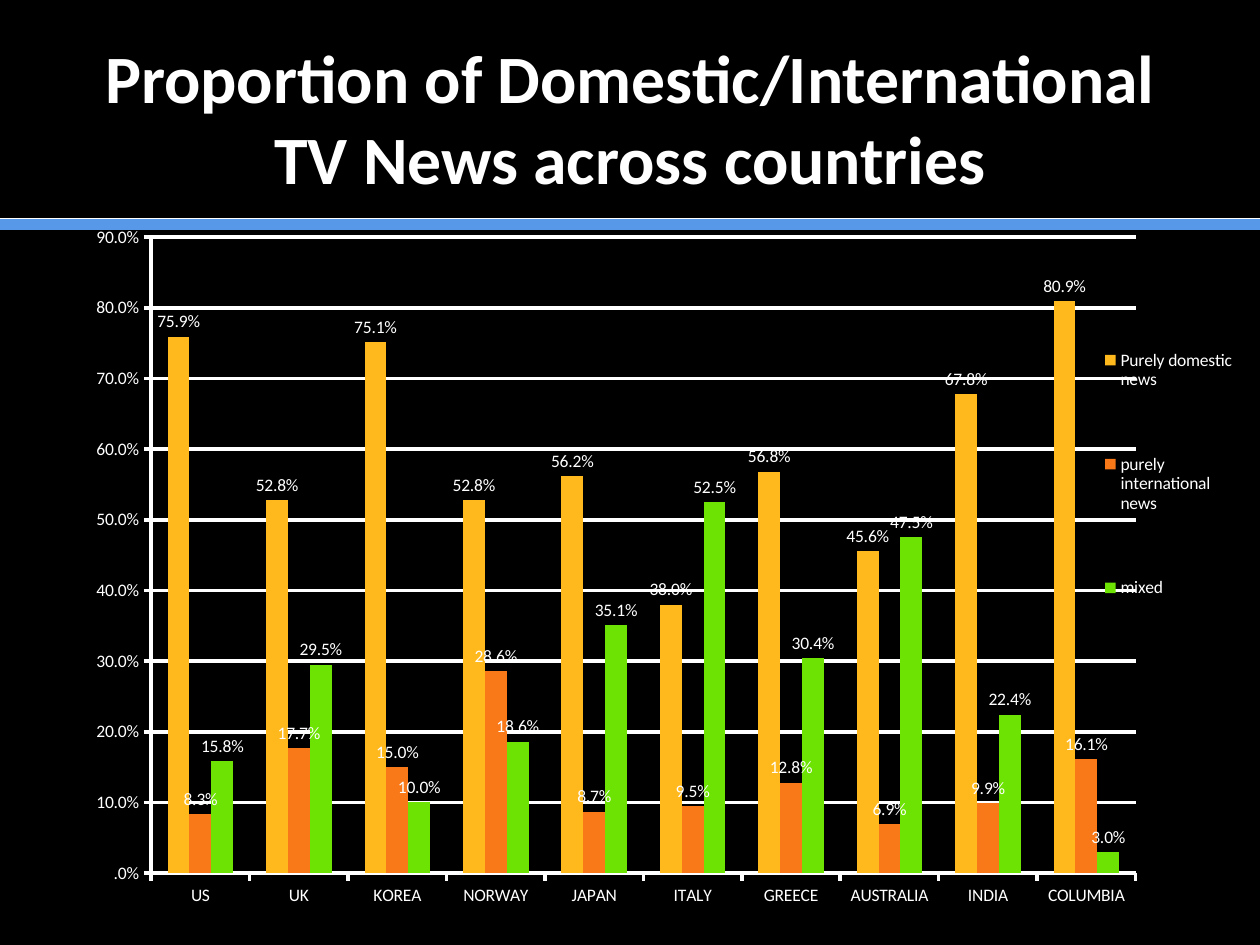
from lxml import etree
from pptx import Presentation
from pptx.chart.data import CategoryChartData
from pptx.dml.color import RGBColor
from pptx.enum.chart import XL_CHART_TYPE, XL_LABEL_POSITION, XL_LEGEND_POSITION, XL_TICK_MARK
from pptx.enum.shapes import MSO_CONNECTOR
from pptx.enum.text import MSO_ANCHOR, PP_ALIGN
from pptx.oxml import parse_xml
from pptx.oxml.ns import nsdecls, qn
from pptx.util import Inches, Pt

FONT = "Calibri"
WHITE = "FFFFFF"
TITLE = "Proportion of Domestic/International TV News across countries"
RULES = [(1.78, "5799E8", 7), (1.73, WHITE, 0.5)]  # top, colour, width
COUNTRIES = ["US", "UK", "KOREA", "NORWAY", "JAPAN", "ITALY", "GREECE",
             "AUSTRALIA", "INDIA", "COLUMBIA"]
SERIES = [
    ("Purely domestic news", "FFB91D",
     [0.759, 0.528, 0.751, 0.528, 0.562, 0.38, 0.568, 0.456, 0.678, 0.809]),
    ("purely international news", "F97817",
     [0.083, 0.177, 0.15, 0.286, 0.087, 0.095, 0.128, 0.069, 0.099, 0.161]),
    ("mixed", "6DE304",
     [0.158, 0.295, 0.1, 0.186, 0.351, 0.525, 0.304, 0.475, 0.224, 0.03]),
]
PERCENT = "####.0%"


def rgb(color):
    return RGBColor.from_string(color)


def format_font(font, size, color=WHITE, bold=False):
    font.name, font.size, font.bold = FONT, Pt(size), bold
    font.color.rgb = rgb(color)


def format_line(line, color, width):
    line.color.rgb = rgb(color)
    line.width = Pt(width)


def add_text(slide, text, box, size, color=WHITE, bold=False, align=PP_ALIGN.CENTER):
    tf = slide.shapes.add_textbox(*map(Inches, box)).text_frame
    tf.word_wrap = True
    tf.vertical_anchor = MSO_ANCHOR.MIDDLE
    p = tf.paragraphs[0]
    p.alignment = align
    r = p.add_run()
    r.text = text
    format_font(r.font, size, color, bold)


def add_rule(slide, top, color, width):
    line = slide.shapes.add_connector(
        MSO_CONNECTOR.STRAIGHT, 0, Inches(top), Inches(10), Inches(top))
    format_line(line.line, color, width)
    etree.SubElement(line._element.spPr, qn("a:effectLst"))


def layout_xml(x, y, w, h, inner=False):
    """Manual chart layout, in fractions of the chart's size."""
    target = '<c:layoutTarget val="inner"/>' if inner else ""
    return parse_xml(
        f'<c:layout {nsdecls("c")}><c:manualLayout>{target}'
        '<c:xMode val="edge"/><c:yMode val="edge"/>'
        f'<c:x val="{x}"/><c:y val="{y}"/><c:w val="{w}"/><c:h val="{h}"/>'
        '</c:manualLayout></c:layout>')


def add_news_chart(slide, box):
    data = CategoryChartData(number_format=PERCENT)
    data.categories = COUNTRIES
    for name, _, values in SERIES:
        data.add_series(name, values)
    chart = slide.shapes.add_chart(
        XL_CHART_TYPE.COLUMN_CLUSTERED, *map(Inches, box), data).chart
    chart.has_title = False
    format_font(chart.font, 10)

    plot = chart.plots[0]
    plot.gap_width, plot.overlap, plot.vary_by_categories = 150, 0, False
    for series, (_, color, _) in zip(plot.series, SERIES):
        series.format.fill.solid()
        series.format.fill.fore_color.rgb = rgb(color)
        labels = series.data_labels
        labels.show_value = True
        labels.number_format, labels.number_format_is_linked = PERCENT, False
        labels.position = XL_LABEL_POSITION.OUTSIDE_END
        format_font(labels.font, 10)

    for axis in (chart.category_axis, chart.value_axis):
        axis.major_tick_mark = XL_TICK_MARK.OUTSIDE
        format_line(axis.format.line, WHITE, 2)
    axis = chart.value_axis
    axis.minimum_scale, axis.maximum_scale, axis.major_unit = 0, 0.9, 0.1
    axis.tick_labels.number_format = PERCENT
    axis.tick_labels.number_format_is_linked = False
    format_line(axis.major_gridlines.format.line, WHITE, 2)

    chart.has_legend = True
    legend = chart.legend
    legend.position, legend.include_in_layout = XL_LEGEND_POSITION.RIGHT, False
    format_font(legend.font, 10)
    for element, index, layout in (
            (chart._chartSpace.chart.plotArea, 0,
             layout_xml(0.122, 0.023, 0.794, 0.878, inner=True)),
            (legend._element, 1, layout_xml(0.885, 0.09, 0.115, 0.52))):
        for old in element.findall(qn("c:layout")):
            element.remove(old)
        element.insert(index, layout)


prs = Presentation()
prs.slide_width, prs.slide_height = Inches(10), Inches(7.5)
s = prs.slides.add_slide(prs.slide_layouts[6])
s.background.fill.solid()
s.background.fill.fore_color.rgb = rgb("000000")
for rule in RULES:
    add_rule(s, *rule)
add_text(s, TITLE, (0.5, 0.3, 9, 1.25), 38.7, bold=True)
add_news_chart(s, (0, 1.75, 9.84, 5.75))
prs.save("out.pptx")
